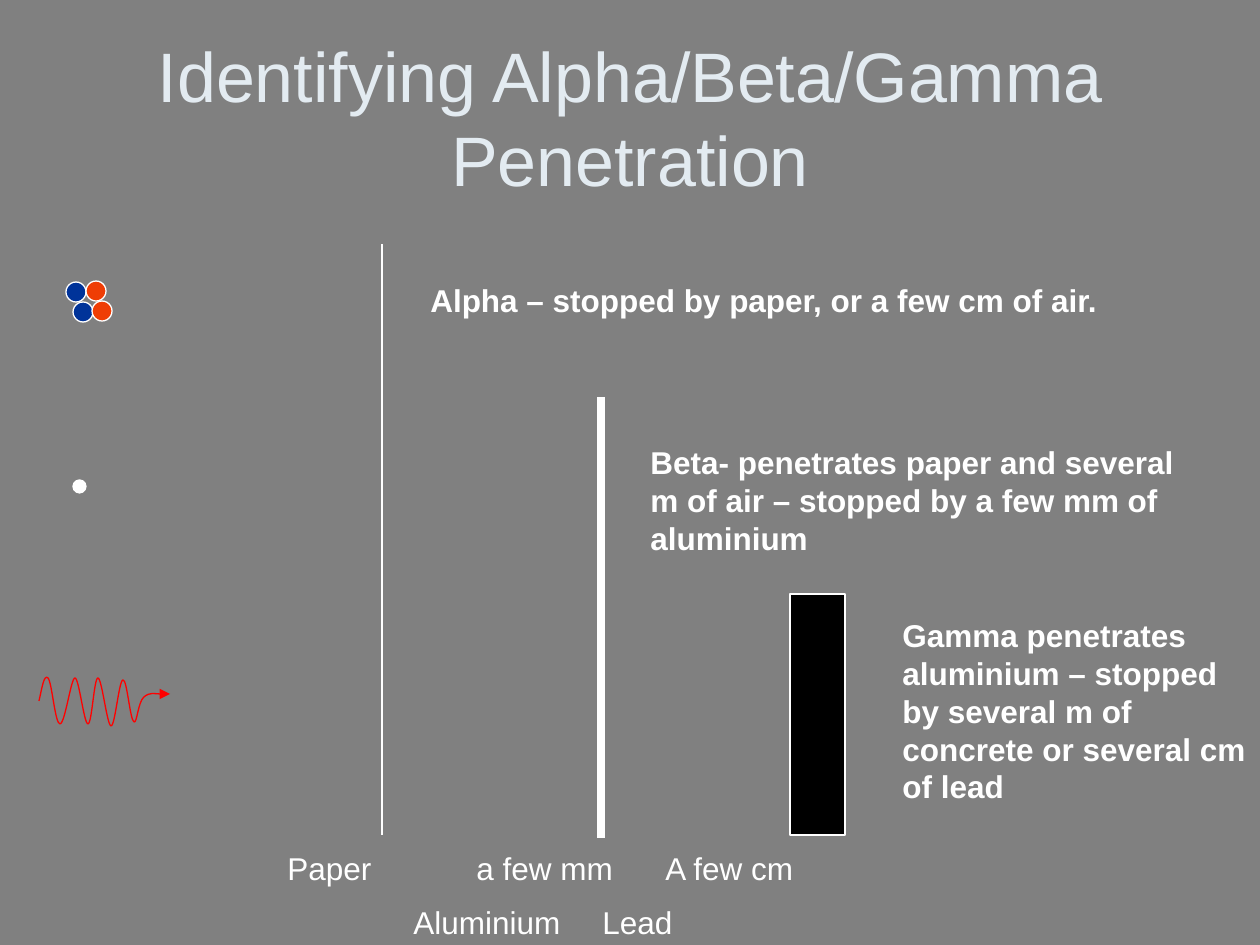
from dataclasses import dataclass

from lxml import etree
from pptx import Presentation
from pptx import util as u
from pptx.dml.color import RGBColor
from pptx.enum import shapes, text
from pptx.oxml.ns import qn

PX = 914400 / 126


@dataclass(frozen=True)
class Theme:
    font: str = "Arial"
    back: str = "808080"
    title: str = "E3EBF1"
    ink: str = "FFFFFF"
    lead: str = "000000"
    neutron: str = "003399"
    proton: str = "EF3D05"
    wave: str = "FF0000"
    title_size: int = 40
    body_size: int = 18
    para_gap: int = 9
    thin: float = 0.75
    thick: float = 4.5


THEME = Theme()

TITLE = ["Identifying Alpha/Beta/Gamma", "Penetration"]
TITLE_BOX = (63, 38, 1134, 157)

# Left, top, width, height, bold, paragraphs
TEXTS = [
    (275, 843, 669, 107, False,
     ["Paper\t\ta few mm\tA few cm", "\t\tAluminium\tLead"]),
    (418, 275, 809, 50, True, ["Alpha – stopped by paper, or a few cm of air."]),
    (638, 437, 583, 126, True,
     ["Beta- penetrates paper and several m of air – stopped by a few mm of aluminium"]),
    (890, 610, 370, 202, True,
     ["Gamma penetrates aluminium – stopped by several m of concrete or several cm of lead"]),
]

# x, top, bottom, line width
BARRIERS = [(382, 244, 835, THEME.thin), (601, 397, 838, THEME.thick)]
LEAD_BLOCK = (790, 594, 55, 241)

NUCLEON = 20
NUCLEONS = [(66, 282, THEME.neutron), (73, 302, THEME.neutron),
            (92, 301, THEME.proton), (86, 281, THEME.proton)]
ELECTRON = (73, 480, 13, 13)

# Start point, then three Bézier points for each half wave
WAVE_START = (39, 701)
WAVE = [
    (42, 688), (44, 674), (48, 678), (52, 682), (55, 724), (60, 724),
    (65, 724), (71, 678), (75, 678), (79, 678), (84, 724), (88, 724),
    (92, 724), (94, 678), (98, 678), (102, 679), (107, 725), (111, 726),
    (115, 727), (119, 680), (123, 680), (127, 679), (130, 720), (134, 722),
    (137, 724), (138, 702), (144, 697), (150, 692), (165, 695), (170, 694),
]


def px(*lengths):
    return [u.Emu(round(length * PX)) for length in lengths]


def rgb(colour):
    return RGBColor.from_string(colour)


def set_line(item, colour, width):
    item.line.color.rgb = rgb(colour)
    item.line.width = u.Pt(width)


def add_solid(parent, kind, box, colour):
    """Add a filled preset shape with a thin light outline."""
    shape = parent.add_shape(kind, *px(*box))
    shape.shadow.inherit = False
    shape.fill.solid()
    shape.fill.fore_color.rgb = rgb(colour)
    set_line(shape, THEME.ink, THEME.thin)


def add_span(para, words, size, colour, bold=False):
    span = para.add_run()
    span.text = words
    span.font.name = THEME.font
    span.font.size = u.Pt(size)
    span.font.bold = bold
    span.font.color.rgb = rgb(colour)


def fill_title(title):
    title.left, title.top, title.width, title.height = px(*TITLE_BOX)
    frame = title.text_frame
    frame.auto_size = text.MSO_AUTO_SIZE.NONE
    frame.vertical_anchor = text.MSO_ANCHOR.MIDDLE
    para = frame.paragraphs[0]
    para.alignment = text.PP_ALIGN.CENTER
    for index, words in enumerate(TITLE):
        if index:
            para.add_line_break()
        add_span(para, words, THEME.title_size, THEME.title)


def add_text(slide, box, bold, paragraphs):
    frame = slide.shapes.add_textbox(*px(*box)).text_frame
    frame.word_wrap = True
    frame.auto_size = text.MSO_AUTO_SIZE.SHAPE_TO_FIT_TEXT
    for index, words in enumerate(paragraphs):
        para = frame.add_paragraph() if index else frame.paragraphs[0]
        if index:
            para.space_before = u.Pt(THEME.para_gap)
        add_span(para, words, THEME.body_size, THEME.ink, bold)


def add_barrier(slide, x, top, bottom, width):
    barrier = slide.shapes.add_connector(
        shapes.MSO_CONNECTOR.STRAIGHT, *px(x, top, x, bottom))
    set_line(barrier, THEME.ink, width)
    etree.SubElement(barrier._element.spPr, qn("a:effectLst"))


def add_wave(slide):
    """Draw the gamma ray: each three line points become one Bézier curve."""
    builder = slide.shapes.build_freeform(*WAVE_START, scale=PX)
    builder.add_line_segments(WAVE, close=False)
    wave = builder.convert_to_shape()
    wave.shadow.inherit = False
    wave.fill.background()
    set_line(wave, THEME.wave, THEME.thin)
    steps = wave._element.xpath(".//a:lnTo")
    for start in range(0, len(steps), 3):
        curve = etree.Element(qn("a:cubicBezTo"))
        steps[start].addprevious(curve)
        for step in steps[start:start + 3]:
            curve.append(step[0])
            step.getparent().remove(step)
    etree.SubElement(wave.line._get_or_add_ln(), qn("a:tailEnd"), type="triangle")


def main():
    deck = Presentation()
    deck.slide_width, deck.slide_height = px(1260, 945)
    slide = deck.slides.add_slide(deck.slide_layouts[5])
    slide.background.fill.solid()
    slide.background.fill.fore_color.rgb = rgb(THEME.back)
    fill_title(slide.shapes.title)

    for barrier in BARRIERS:
        add_barrier(slide, *barrier)
    add_solid(slide.shapes, shapes.MSO_SHAPE.RECTANGLE, LEAD_BLOCK, THEME.lead)

    alpha = slide.shapes.add_group_shape()
    for x, y, colour in NUCLEONS:
        add_solid(alpha.shapes, shapes.MSO_SHAPE.OVAL, (x, y, NUCLEON, NUCLEON), colour)
    add_solid(slide.shapes, shapes.MSO_SHAPE.OVAL, ELECTRON, THEME.ink)
    add_wave(slide)

    for *box, bold, paragraphs in TEXTS:
        add_text(slide, box, bold, paragraphs)
    deck.save("out.pptx")


if __name__ == "__main__":
    main()
